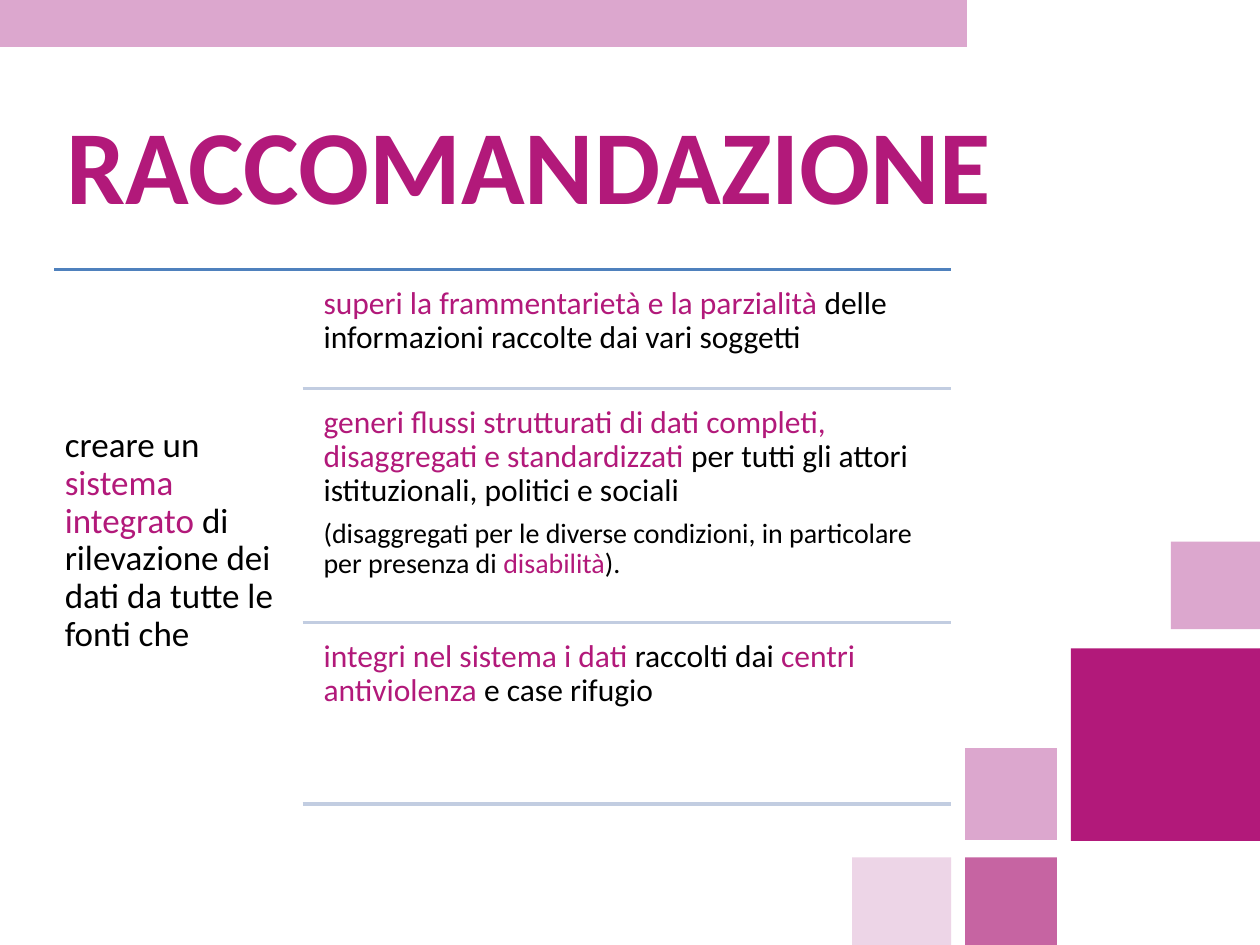
import pptx
import pptx.util
import pptx.dml.color
import pptx.enum.shapes
import pptx.enum.text
import pptx.oxml
import pptx.oxml.ns

Pt = pptx.util.Pt
Anchor = pptx.enum.text.MSO_ANCHOR
FONT = "Calibri"
HUES = {
    "plum": "B2197A",
    "rose": "C664A2",
    "pink": "DCA7CE",
    "pale": "EDD5E7",
    "blue": "4F81BD",
    "mist": "C2CDE1",
    "black": "000000",
}
BLOCKS = [
    ("pale", 487, 490, 56.5, 50),
    ("rose", 551.5, 490, 52.5, 50),
    ("pink", 551.5, 427.5, 52.5, 52.5),
    ("plum", 612, 370.5, 108, 110),
    ("pink", 669, 309.5, 51, 50),
    ("pink", 0, 0, 552.5, 26.8),
]
LEAD = [
    (20, 6, [
        ("creare un ", "black"),
        ("sistema integrato ", "plum"),
        ("di rilevazione dei dati da tutte le fonti che", "black"),
    ]),
]
ROWS = [
    (68, [
        (18, 6, [
            ("superi la frammentarietà e la parzialità", "plum"),
            (" delle informazioni raccolte dai vari soggetti", "black"),
        ]),
    ]),
    (133.7, [
        (18, 6, [
            ("generi flussi strutturati di dati completi, disaggregati e standardizzati ", "plum"),
            ("per tutti gli attori istituzionali, politici e sociali", "black"),
        ]),
        (16, 3, [
            ("(disaggregati per le diverse condizioni, in particolare per presenza di ", "black"),
            ("disabilità", "plum"),
            (").", "black"),
        ]),
    ]),
    (103.7, [
        (18, 6, [
            ("integri nel sistema i dati ", "plum"),
            ("raccolti dai", "black"),
            (" centri antiviolenza ", "plum"),
            ("e case rifugio", "black"),
        ]),
    ]),
]


def tint(hue):
    return pptx.dml.color.RGBColor.from_string(HUES[hue])


def style(run, size, hue, bold=False):
    run.font.name = FONT
    run.font.size = Pt(size)
    run.font.bold = bold
    run.font.color.rgb = tint(hue)


def head(slide, x, y, w, h):
    title = slide.shapes.title
    title.left, title.top, title.width, title.height = Pt(x), Pt(y), Pt(w), Pt(h)
    frame = title.text_frame
    frame.text = "RACCOMANDAZIONE"
    frame.word_wrap = False
    frame.auto_size = pptx.enum.text.MSO_AUTO_SIZE.SHAPE_TO_FIT_TEXT
    frame.vertical_anchor = Anchor.TOP
    para = frame.paragraphs[0]
    para.alignment = pptx.enum.text.PP_ALIGN.LEFT
    style(para.runs[0], 60, "plum", True)


def decor(slide):
    for hue, x, y, w, h in BLOCKS:
        block = slide.shapes.add_shape(
            pptx.enum.shapes.MSO_SHAPE.RECTANGLE, Pt(x), Pt(y), Pt(w), Pt(h))
        block.shadow.inherit = False
        block.fill.solid()
        block.fill.fore_color.rgb = tint(hue)
        block.line.fill.background()


def rule(slide, left, right, y, hue):
    line = slide.shapes.add_connector(
        pptx.enum.shapes.MSO_CONNECTOR.STRAIGHT, Pt(left), Pt(y), Pt(right), Pt(y))
    line.line.color.rgb = tint(hue)
    line.line.width = Pt(2)
    props = line._element.spPr
    props.append(pptx.oxml.parse_xml(
        "<a:effectLst %s/>" % pptx.oxml.ns.nsdecls("a")))


def prose(slide, x, y, w, h, paras, inset, anchor):
    frame = slide.shapes.add_textbox(Pt(x), Pt(y), Pt(w), Pt(h)).text_frame
    frame.word_wrap = True
    frame.vertical_anchor = anchor
    frame.margin_left = frame.margin_right = Pt(inset)
    frame.margin_top = frame.margin_bottom = Pt(inset)
    for i, (size, after, parts) in enumerate(paras):
        para = frame.add_paragraph() if i else frame.paragraphs[0]
        para.line_spacing = 0.9
        para.space_after = Pt(after)
        for text, hue in parts:
            run = para.add_run()
            run.text = text
            style(run, size, hue)


def body(slide, x, y, w, h):
    side, pad, gap = 142, 6.5, 5
    right = x + w
    rule(slide, x, right, y, "blue")
    prose(slide, x, y, side, h, LEAD, 6, Anchor.MIDDLE)
    for tall, paras in ROWS:
        left = x + side + pad
        prose(slide, left, y + gap, right - left, tall - gap, paras, 5.4, Anchor.TOP)
        y += tall
        rule(slide, x + side, right, y, "mist")


def main():
    deck = pptx.Presentation()
    deck.slide_width, deck.slide_height = Pt(720), Pt(540)
    slide = deck.slides.add_slide(deck.slide_layouts[5])
    head(slide, 31, 53.5, 551, 80)
    decor(slide)
    body(slide, 31, 154, 512.6, 310)
    deck.save("out.pptx")


if __name__ == "__main__":
    main()
